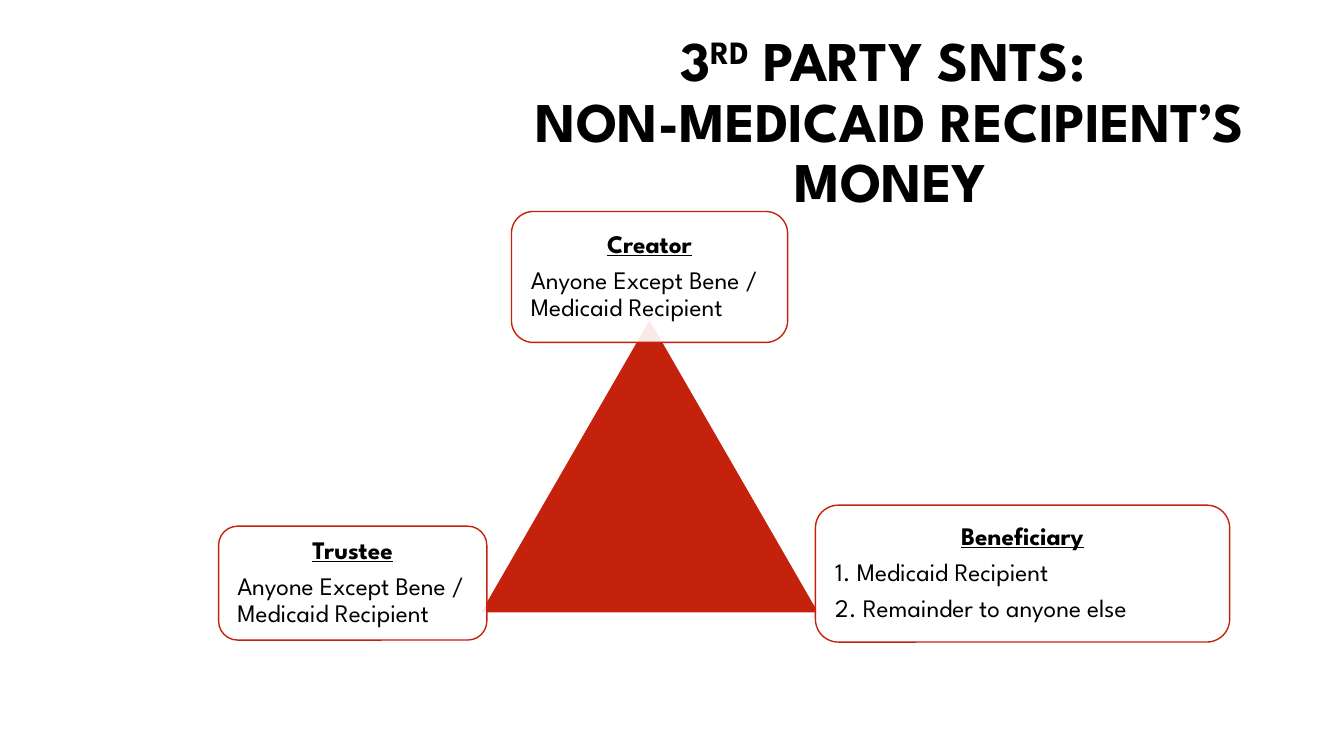
from dataclasses import dataclass

import pptx
import pptx.dml.color
import pptx.enum.shapes
import pptx.enum.text
import pptx.oxml
import pptx.oxml.ns
import pptx.util
from pptx.util import Cm

ALIGN = pptx.enum.text.PP_ALIGN
SHAPES = pptx.enum.shapes.MSO_SHAPE


@dataclass(frozen=True)
class Theme:
    font: str = "League Spartan"
    ink: str = "000000"
    accent: str = "C4220D"
    paper: str = "FFFFFF"
    card_opacity: int = 90
    title_size: float = 40
    body_size: float = 18
    line_width: float = 1
    line_spacing: float = 0.9
    space_after: float = 6.3


THEME = Theme()


def rgb(code):
    return pptx.dml.color.RGBColor.from_string(code)


def add_run(paragraph, text, size, bold=False, underline=False):
    run = paragraph.add_run()
    run.text = text
    font = run.font
    font.name, font.size = THEME.font, pptx.util.Pt(size)
    font.bold, font.underline = bold, underline
    font.color.rgb = rgb(THEME.ink)
    return run


def add_outlined(slide, kind, box, fill, line):
    shape = slide.shapes.add_shape(kind, *box)
    shape.shadow.inherit = False
    shape.fill.solid()
    shape.fill.fore_color.rgb = rgb(fill)
    shape.line.color.rgb = rgb(line)
    shape.line.width = pptx.util.Pt(THEME.line_width)
    return shape


def set_opacity(shape, percent):
    color = shape.fill._xPr.find(".//" + pptx.oxml.ns.qn("a:srgbClr"))
    alpha = pptx.oxml.parse_xml(
        f'<a:alpha {pptx.oxml.ns.nsdecls("a")} val="{percent * 1000}"/>')
    color.append(alpha)


def fill_title(slide, box):
    title = slide.shapes.title
    title.left, title.top, title.width, title.height = box
    frame = title.text_frame
    frame.word_wrap = True
    frame.auto_size = pptx.enum.text.MSO_AUTO_SIZE.NONE
    frame.vertical_anchor = pptx.enum.text.MSO_ANCHOR.MIDDLE
    heading = frame.paragraphs[0]
    heading.alignment = ALIGN.CENTER
    heading.line_spacing = THEME.line_spacing
    add_run(heading, "3", THEME.title_size, bold=True)
    ordinal = add_run(heading, "RD", THEME.title_size, bold=True)
    ordinal.font._element.set("baseline", "30000")
    add_run(heading, " PARTY SNTS: ", THEME.title_size, bold=True)
    heading.add_line_break()
    add_run(heading, "NON-MEDICAID RECIPIENT’S MONEY", THEME.title_size, bold=True)


def add_role_card(slide, box, role, details):
    card = add_outlined(slide, SHAPES.ROUNDED_RECTANGLE, box,
                        THEME.paper, THEME.accent)
    set_opacity(card, THEME.card_opacity)
    frame = card.text_frame
    frame.word_wrap = True
    frame.vertical_anchor = pptx.enum.text.MSO_ANCHOR.MIDDLE
    frame.margin_left = frame.margin_right = Cm(0.33)
    frame.margin_top = frame.margin_bottom = Cm(0.33)
    for index, text in enumerate([role, *details]):
        is_role = index == 0
        paragraph = frame.paragraphs[0] if is_role else frame.add_paragraph()
        paragraph.alignment = ALIGN.CENTER if is_role else ALIGN.LEFT
        paragraph.line_spacing = THEME.line_spacing
        paragraph.space_after = pptx.util.Pt(THEME.space_after)
        add_run(paragraph, text, THEME.body_size, bold=is_role, underline=is_role)


def add_trust_triangle(slide, box):
    """Draw the triangle in the box, with one role card at each corner."""
    left, top, width, height = box
    right, base = left + width, top + height
    add_outlined(slide, SHAPES.ISOSCELES_TRIANGLE, box, THEME.accent, THEME.paper)

    outsiders = ["Anyone Except Bene / Medicaid Recipient"]
    creator_width = Cm(6.96)
    add_role_card(slide, (left + (width - creator_width) // 2, top - Cm(2.7),
                          creator_width, Cm(3.3)), "Creator", outsiders)
    add_role_card(slide, (right - Cm(0.1), base - Cm(2.72), Cm(10.44), Cm(3.45)),
                  "Beneficiary",
                  ["1. Medicaid Recipient", "2. Remainder to anyone else"])
    trustee_width = Cm(6.76)
    add_role_card(slide, (left + Cm(0.18) - trustee_width, base - Cm(2.19),
                          trustee_width, Cm(2.87)), "Trustee", outsiders)


def main():
    deck = pptx.Presentation()
    deck.slide_width, deck.slide_height = Cm(33.87), Cm(19.05)
    slide = deck.slides.add_slide(deck.slide_layouts.get_by_name("Title Only"))
    slide.background.fill.solid()
    slide.background.fill.fore_color.rgb = rgb(THEME.paper)
    fill_title(slide, (Cm(11), Cm(0.94), Cm(22.86), Cm(4.37)))
    add_trust_triangle(slide, (Cm(12.09), Cm(8.03), Cm(8.56), Cm(7.42)))
    deck.save("out.pptx")


if __name__ == "__main__":
    main()
